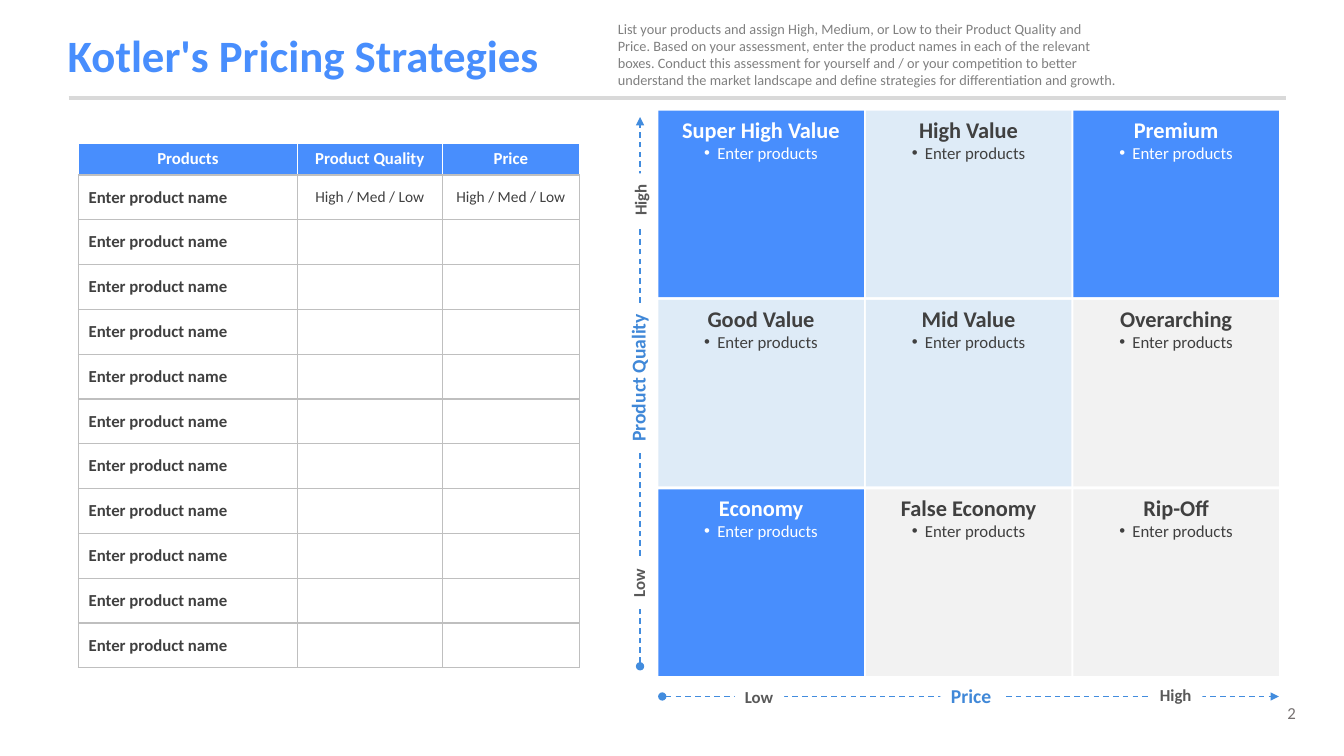
from lxml import etree
from pptx import Presentation
from pptx.dml.color import RGBColor
from pptx.enum import dml, shapes, text
from pptx.oxml import ns
from pptx.util import Cm, Pt

HUES = {
    "blue": "488EFD", "axis": "428CDE", "label": "4088D8", "pale": "DEEBF7",
    "light": "F2F2F2", "rule": "D9D9D9", "grid": "BFBFBF", "white": "FFFFFF",
    "dark": "404040", "mid": "595959", "gray": "808080", "page": "767171",
}
LEFT, MID, RIGHT = text.PP_ALIGN.LEFT, text.PP_ALIGN.CENTER, text.PP_ALIGN.RIGHT


def style(para, size, hue, bold=False, align=LEFT):
    para.alignment = align
    for run in para.runs:
        run.font.name = "Calibri"
        run.font.size = Pt(size)
        run.font.bold = bold
        run.font.color.rgb = RGBColor.from_string(HUES[hue])


def draw(start, end, hue, width):
    line = slide.shapes.add_connector(
        shapes.MSO_CONNECTOR.STRAIGHT, *[Cm(v) for v in start + end])
    line.line.color.rgb = RGBColor.from_string(HUES[hue])
    line.line.width = Pt(width)
    etree.SubElement(line._element.spPr, ns.qn("a:effectLst"))
    return line


deck = Presentation()
deck.slide_width, deck.slide_height = Cm(33.87), Cm(19.05)
slide = deck.slides.add_slide(deck.slide_layouts[5])

draw((1.73, 2.46), (32.41, 2.46), "rule", 3)

title = slide.shapes.title
title.left, title.top, title.width, title.height = Cm(1.45), Cm(0.48), Cm(27.79), Cm(1.96)
title.text_frame.text = "Kotler's Pricing Strategies"
title.text_frame.vertical_anchor = text.MSO_ANCHOR.MIDDLE
title.text_frame.paragraphs[0].line_spacing = 0.9
style(title.text_frame.paragraphs[0], 32, "blue", True)

guide = (
    "List your products and assign High, Medium, or Low to their Product Quality and Price. "
    "Based on your assessment, enter the product names in each of the relevant boxes. "
    "Conduct this assessment for yourself and / or your competition to better understand "
    "the market landscape and define strategies for differentiation and growth."
)
notes = [
    (15.32, 0.38, 13.06, 1.96, guide, 10.2, "gray", LEFT),
    (30.3, 17.58, 2.59, 0.76, "2", 12, "page", RIGHT),
]
for x, y, w, h, words, size, hue, align in notes:
    box = slide.shapes.add_textbox(Cm(x), Cm(y), Cm(w), Cm(h))
    box.text_frame.word_wrap = True
    box.text_frame.margin_right = Cm(0.23)
    box.text_frame.text = words
    style(box.text_frame.paragraphs[0], size, hue, align=align)

rows = [["Products", "Product Quality", "Price"]]
rows += [["Enter product name", "", ""] for _ in range(11)]
rows[1][1:] = ["High / Med / Low"] * 2
table = slide.shapes.add_table(
    len(rows), 3, Cm(1.98), Cm(3.61), Cm(12.62), Cm(13.23)).table
for col, width in zip(table.columns, (5.51, 3.66, 3.45)):
    col.width = Cm(width)
for r, row in enumerate(rows):
    table.rows[r].height = Cm(1.13 if r else 0.8)
    for c, words in enumerate(row):
        cell = table.cell(r, c)
        cell.text = words
        cell.vertical_anchor = text.MSO_ANCHOR.MIDDLE
        cell.fill.solid()
        cell.fill.fore_color.rgb = RGBColor.from_string(HUES["white" if r else "blue"])
        style(cell.text_frame.paragraphs[0], 11 if r and c else 12,
              "dark" if r else "white", not (r and c), LEFT if r and not c else MID)
        props = cell._tc.get_or_add_tcPr()
        for i, side in enumerate(("lnL", "lnR", "lnT", "lnB")):
            edge = etree.Element(ns.qn("a:" + side), w="12700")
            fill = etree.SubElement(edge, ns.qn("a:solidFill"))
            hue = "grid" if r or side == "lnB" else "white"
            etree.SubElement(fill, ns.qn("a:srgbClr"), val=HUES[hue])
            props.insert(i, edge)

for start, end in [((16.13, 16.79), (16.13, 2.95)), ((16.69, 17.55), (32.23, 17.55))]:
    axis = draw(start, end, "axis", 1)
    axis.line.dash_style = dml.MSO_LINE.DASH
    stroke = axis._element.spPr.find(ns.qn("a:ln"))
    etree.SubElement(stroke, ns.qn("a:headEnd"), type="oval")
    etree.SubElement(stroke, ns.qn("a:tailEnd"), type="triangle")

matrix = [
    [("Super High Value", "blue"), ("High Value", "pale"), ("Premium", "blue")],
    [("Good Value", "pale"), ("Mid Value", "pale"), ("Overarching", "light")],
    [("Economy", "blue"), ("False Economy", "light"), ("Rip-Off", "light")],
]
for r, row in enumerate(matrix):
    for c, (name, hue) in enumerate(row):
        box = slide.shapes.add_shape(
            shapes.MSO_SHAPE.RECTANGLE, Cm(16.59 + 5.23 * c), Cm(2.79 + 4.77 * r),
            Cm(5.18), Cm(4.7))
        box.shadow.inherit = False
        box.fill.solid()
        box.fill.fore_color.rgb = RGBColor.from_string(HUES[hue])
        box.line.fill.background()
        frame = box.text_frame
        frame.word_wrap = True
        frame.vertical_anchor = text.MSO_ANCHOR.TOP
        frame.text = name + "\nEnter products"
        ink = "white" if hue == "blue" else "dark"
        head, item = frame.paragraphs
        style(head, 16, ink, True, MID)
        style(item, 12, ink, align=MID)
        props = item._p.get_or_add_pPr()
        props.set("marL", str(Cm(0.33)))
        props.set("indent", str(-Cm(0.33)))
        etree.SubElement(props, ns.qn("a:buFont"), typeface="Arial")
        etree.SubElement(props, ns.qn("a:buChar"), char="•")

labels = [
    ("Product Quality", 14.2, 9.09, 3.76, 0.86, 270, 14, "label", MID),
    ("Price", 23.7, 17.12, 1.55, 0.86, 0, 14, "label", MID),
    ("High", 28.98, 17.12, 1.32, 0.76, 0, 12, "mid", LEFT),
    ("Low", 18.52, 17.17, 1.24, 0.76, 0, 12, "mid", LEFT),
    ("High", 15.47, 4.65, 1.32, 0.76, 270, 12, "mid", LEFT),
    ("Low", 15.47, 14.3, 1.24, 0.76, 270, 12, "mid", LEFT),
]
for name, x, y, w, h, turn, size, hue, align in labels:
    tag = slide.shapes.add_shape(
        shapes.MSO_SHAPE.RECTANGLE, Cm(x), Cm(y), Cm(w), Cm(h))
    tag.rotation = turn
    tag.shadow.inherit = False
    tag.fill.solid()
    tag.fill.fore_color.rgb = RGBColor.from_string(HUES["white"])
    tag.line.fill.background()
    tag.text_frame.word_wrap = False
    tag.text_frame.auto_size = text.MSO_AUTO_SIZE.SHAPE_TO_FIT_TEXT
    tag.text_frame.vertical_anchor = text.MSO_ANCHOR.TOP
    tag.text_frame.text = name
    style(tag.text_frame.paragraphs[0], size, hue, True, align)

deck.save("out.pptx")
